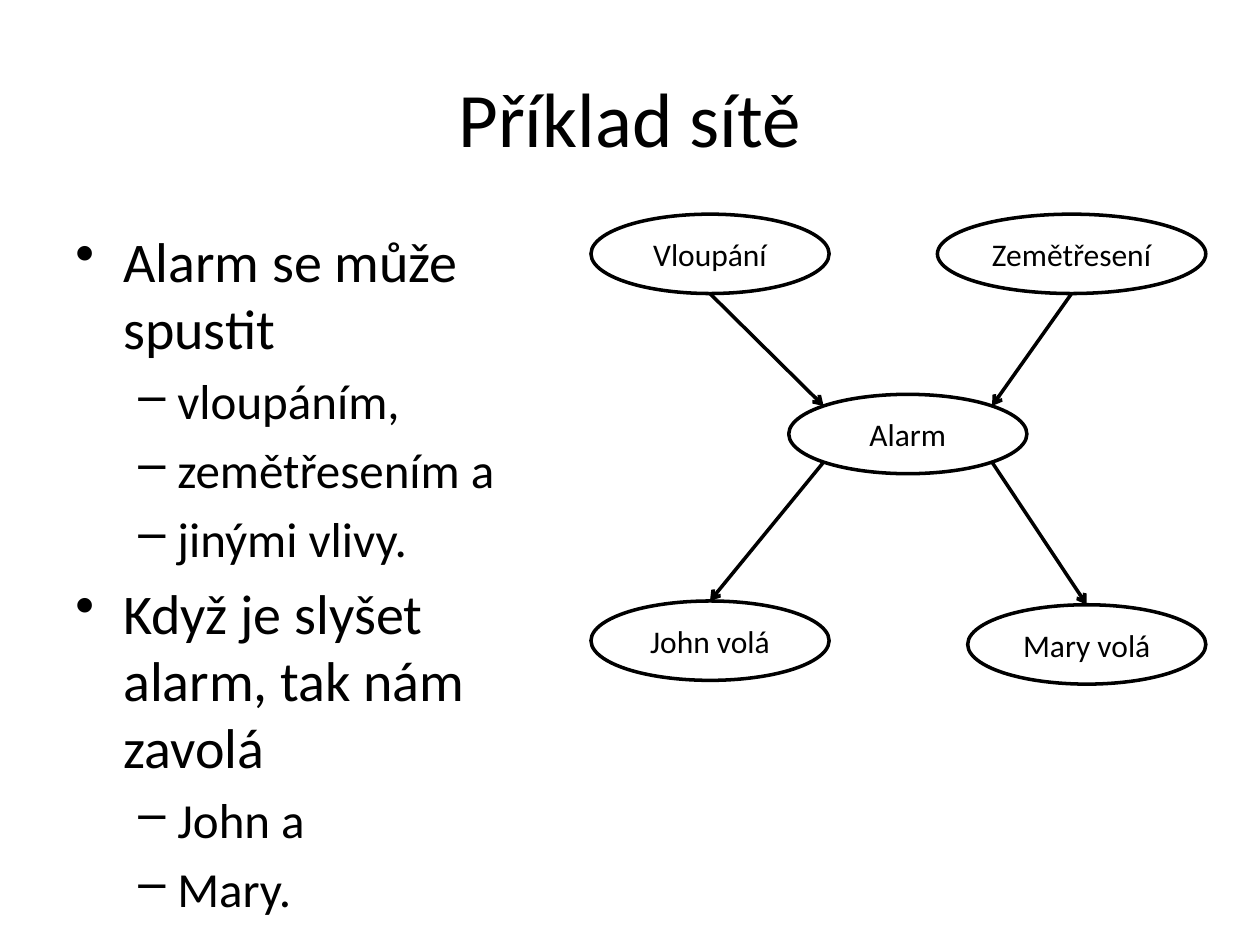
from dataclasses import dataclass
from math import sqrt

from lxml.etree import SubElement
from pptx import Presentation
from pptx.dml.color import RGBColor
from pptx.enum.shapes import MSO_CONNECTOR, MSO_SHAPE
from pptx.enum.text import MSO_ANCHOR, PP_ALIGN
from pptx.oxml.ns import qn
from pptx.slide import Slide
from pptx.text.text import TextFrame, _Paragraph
from pptx.util import Inches, Pt

BLACK = RGBColor(0, 0, 0)
FONT = "Calibri"
NODE_HEIGHT = 0.63
LINE_WIDTH = Pt(2)


@dataclass(frozen=True)
class Node:
    label: str
    left: float
    top: float
    width: float = 1.89

    def point(self, dx: float, dy: float) -> tuple[float, float]:
        scale = 1 / sqrt(dx**2 + dy**2)
        return (
            self.left + self.width / 2 * (1 + dx * scale),
            self.top + NODE_HEIGHT / 2 * (1 + dy * scale),
        )


@dataclass(frozen=True)
class Edge:
    start: tuple[float, float]
    end: tuple[float, float]


@dataclass(frozen=True)
class BulletStyle:
    char: str
    size: int
    margin: float
    hanging: float


@dataclass(frozen=True)
class Item:
    text: str
    level: int = 0


STYLES = [BulletStyle("•", 32, 0.38, 0.38), BulletStyle("–", 28, 0.81, 0.31)]
ITEMS = [
    Item("Alarm se může spustit"),
    Item("vloupáním,", 1),
    Item("zemětřesením a", 1),
    Item("jinými vlivy.", 1),
    Item("Když je slyšet alarm, tak nám zavolá"),
    Item("John a", 1),
    Item("Mary.", 1),
]

BURGLARY = Node("Vloupání", 4.69, 1.7)
EARTHQUAKE = Node("Zemětřesení", 7.44, 1.7, 2.13)
ALARM = Node("Alarm", 6.26, 3.13)
JOHN = Node("John volá", 4.69, 4.77)
MARY = Node("Mary volá", 7.68, 4.8)
NODES = [BURGLARY, EARTHQUAKE, ALARM, JOHN, MARY]
EDGES = [
    Edge(BURGLARY.point(0, 1), ALARM.point(-1, -1)),
    Edge(EARTHQUAKE.point(0, 1), ALARM.point(1, -1)),
    Edge(ALARM.point(1, 1), MARY.point(0, -1)),
    Edge(ALARM.point(-1, 1), JOHN.point(0, -1)),
]


def set_font(p: _Paragraph, size: int) -> None:
    p.font.name = FONT
    p.font.size = Pt(size)
    p.font.color.rgb = BLACK


def fill_centred(tf: TextFrame, text: str, size: int) -> None:
    tf.vertical_anchor = MSO_ANCHOR.MIDDLE
    p = tf.paragraphs[0]
    p.text = text
    p.alignment = PP_ALIGN.CENTER
    set_font(p, size)


def add_text_frame(s: Slide, left: float, top: float, width: float, height: float) -> TextFrame:
    tf = s.shapes.add_textbox(Inches(left), Inches(top), Inches(width), Inches(height)).text_frame
    tf.word_wrap = True
    return tf


def write_item(p: _Paragraph, item: Item) -> None:
    style = STYLES[item.level]
    p.text = item.text
    p.level = item.level
    p.space_before = Pt(style.size * 0.2)
    set_font(p, style.size)
    pPr = p._p.get_or_add_pPr()
    pPr.set("marL", str(Inches(style.margin)))
    pPr.set("indent", str(-Inches(style.hanging)))
    bullet = pPr.makeelement(qn("a:buChar"), {"char": style.char})
    pPr.find(qn("a:defRPr")).addprevious(bullet)


def add_node(s: Slide, node: Node) -> None:
    sp = s.shapes.add_shape(
        MSO_SHAPE.OVAL, Inches(node.left), Inches(node.top), Inches(node.width), Inches(NODE_HEIGHT)
    )
    sp.shadow.inherit = False
    sp.fill.background()
    sp.line.color.rgb = BLACK
    sp.line.width = LINE_WIDTH
    sp.text_frame.word_wrap = False
    fill_centred(sp.text_frame, node.label, 18)


def add_edge(s: Slide, edge: Edge) -> None:
    ends = [Inches(v) for v in (*edge.start, *edge.end)]
    line = s.shapes.add_connector(MSO_CONNECTOR.STRAIGHT, *ends)
    line.line.color.rgb = BLACK
    line.line.width = LINE_WIDTH
    SubElement(line.line._get_or_add_ln(), qn("a:tailEnd"), type="arrow")
    SubElement(line._element.spPr, qn("a:effectLst"))


def main() -> None:
    prs = Presentation()
    prs.slide_width, prs.slide_height = Inches(10), Inches(7.5)
    s = prs.slides.add_slide(prs.slide_layouts[6])

    fill_centred(add_text_frame(s, 0.5, 0.3, 9, 1.25), "Příklad sítě", 44)

    tf = add_text_frame(s, 0.5, 1.75, 4.03, 5.75)
    for i, item in enumerate(ITEMS):
        write_item(tf.add_paragraph() if i else tf.paragraphs[0], item)

    for node in NODES:
        add_node(s, node)
    for edge in EDGES:
        add_edge(s, edge)

    prs.save("out.pptx")


if __name__ == "__main__":
    main()
